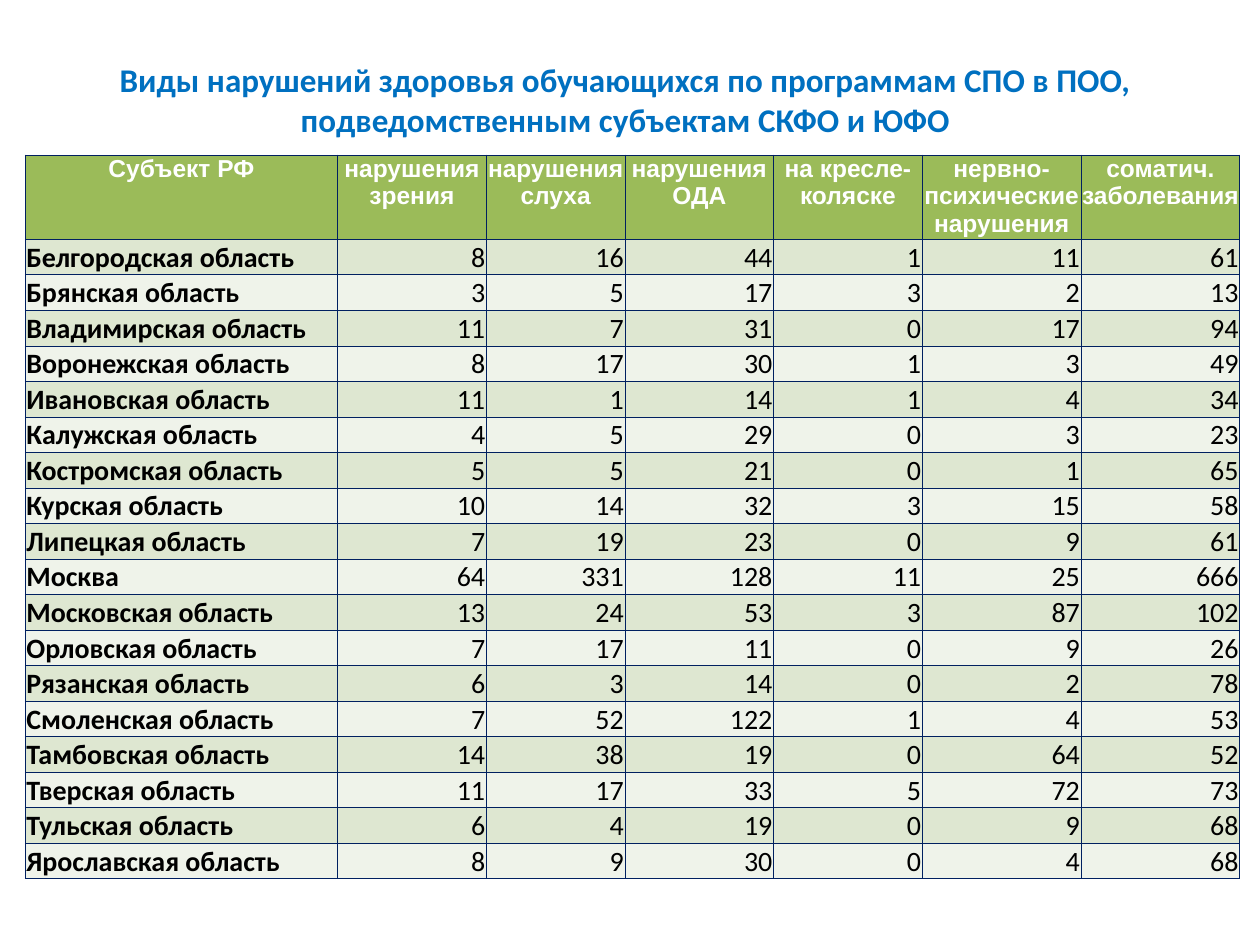
"""Build a slide with a table of health impairments among students by region."""
from lxml import etree
from pptx import Presentation
from pptx.dml.color import RGBColor
from pptx.enum import text
from pptx.oxml import ns
from pptx.util import Inches, Pt

TITLE = ("Виды нарушений здоровья обучающихся по программам СПО в ПОО, "
         "подведомственным субъектам СКФО и ЮФО")
HEADERS = ("Субъект РФ", "нарушения зрения", "нарушения слуха", "нарушения ОДА",
           "на кресле-коляске", "нервно-психические нарушения", "соматич. заболевания")
REGIONS = [
    ("Белгородская область", 8, 16, 44, 1, 11, 61),
    ("Брянская область", 3, 5, 17, 3, 2, 13),
    ("Владимирская область", 11, 7, 31, 0, 17, 94),
    ("Воронежская область", 8, 17, 30, 1, 3, 49),
    ("Ивановская область", 11, 1, 14, 1, 4, 34),
    ("Калужская область", 4, 5, 29, 0, 3, 23),
    ("Костромская область", 5, 5, 21, 0, 1, 65),
    ("Курская область", 10, 14, 32, 3, 15, 58),
    ("Липецкая область", 7, 19, 23, 0, 9, 61),
    ("Москва", 64, 331, 128, 11, 25, 666),
    ("Московская область", 13, 24, 53, 3, 87, 102),
    ("Орловская область", 7, 17, 11, 0, 9, 26),
    ("Рязанская область", 6, 3, 14, 0, 2, 78),
    ("Смоленская область", 7, 52, 122, 1, 4, 53),
    ("Тамбовская область", 14, 38, 19, 0, 64, 52),
    ("Тверская область", 11, 17, 33, 5, 72, 73),
    ("Тульская область", 6, 4, 19, 0, 9, 68),
    ("Ярославская область", 8, 9, 30, 0, 4, 68),
]
COLUMN_WIDTHS = (2.48, 1.18, 1.1, 1.18, 1.18, 1.26, 1.26)
HEADER_HEIGHT, ROW_HEIGHT = 0.67, 0.28
THEME = {
    "title": ("Calibri", 18.9, "0070C0"),
    "header": ("Arial", 14, "FFFFFF"),
    "body": ("Calibri", 16, "000000"),
    "header_fill": "9BBB59",
    "bands": ("DEE7D1", "EFF3EA"),
    "border": ("002060", 0.5),
}


def style_paragraph(paragraph, style, alignment, bold):
    paragraph.alignment = alignment
    font = paragraph.font
    font.name, size, color = THEME[style]
    font.size, font.bold = Pt(size), bold
    font.color.rgb = RGBColor.from_string(color)


def add_borders(cell):
    color, width = THEME["border"]
    properties = cell._tc.get_or_add_tcPr()
    for side in ("lnL", "lnR", "lnT", "lnB"):
        line = etree.SubElement(properties, ns.qn(f"a:{side}"), w=str(Pt(width)))
        fill = etree.SubElement(line, ns.qn("a:solidFill"))
        etree.SubElement(fill, ns.qn("a:srgbClr"), val=color)


def fill_cell(cell, value, style, fill, alignment, bold):
    header = style == "header"
    side = Inches(0 if header else 0.01)
    cell.margin_left = cell.margin_right = cell.margin_top = side
    cell.margin_bottom = 0
    cell.vertical_anchor = text.MSO_ANCHOR.TOP if header else text.MSO_ANCHOR.BOTTOM
    cell.text = str(value)
    style_paragraph(cell.text_frame.paragraphs[0], style, alignment, bold)
    add_borders(cell)
    cell.fill.solid()
    cell.fill.fore_color.rgb = RGBColor.from_string(fill)


def add_title(slide):
    title = slide.shapes.title
    title.left, title.top = Inches(0.2), Inches(0.44)
    title.width, title.height = Inches(9.53), Inches(0.7)
    title.text_frame.text = TITLE
    title.text_frame.word_wrap = True
    title.text_frame.vertical_anchor = text.MSO_ANCHOR.MIDDLE
    style_paragraph(title.text_frame.paragraphs[0], "title", text.PP_ALIGN.CENTER, True)


def add_region_table(slide):
    height = HEADER_HEIGHT + ROW_HEIGHT * len(REGIONS)
    table = slide.shapes.add_table(
        len(REGIONS) + 1, len(HEADERS), Inches(0.2), Inches(1.23),
        Inches(sum(COLUMN_WIDTHS)), Inches(height)).table
    for column, width in zip(table.columns, COLUMN_WIDTHS):
        column.width = Inches(width)
    for index, row in enumerate(table.rows):
        row.height = Inches(ROW_HEIGHT if index else HEADER_HEIGHT)

    for column, label in enumerate(HEADERS):
        fill_cell(table.cell(0, column), label, "header", THEME["header_fill"],
                  text.PP_ALIGN.CENTER, True)
    for index, region in enumerate(REGIONS):
        for column, value in enumerate(region):
            alignment = text.PP_ALIGN.RIGHT if column else text.PP_ALIGN.LEFT
            fill_cell(table.cell(index + 1, column), value, "body",
                      THEME["bands"][index % 2], alignment, column == 0)


def main():
    presentation = Presentation()
    presentation.slide_width, presentation.slide_height = Inches(10), Inches(7.5)
    slide = presentation.slides.add_slide(presentation.slide_layouts[5])
    add_title(slide)
    add_region_table(slide)
    presentation.save("out.pptx")


if __name__ == "__main__":
    main()
